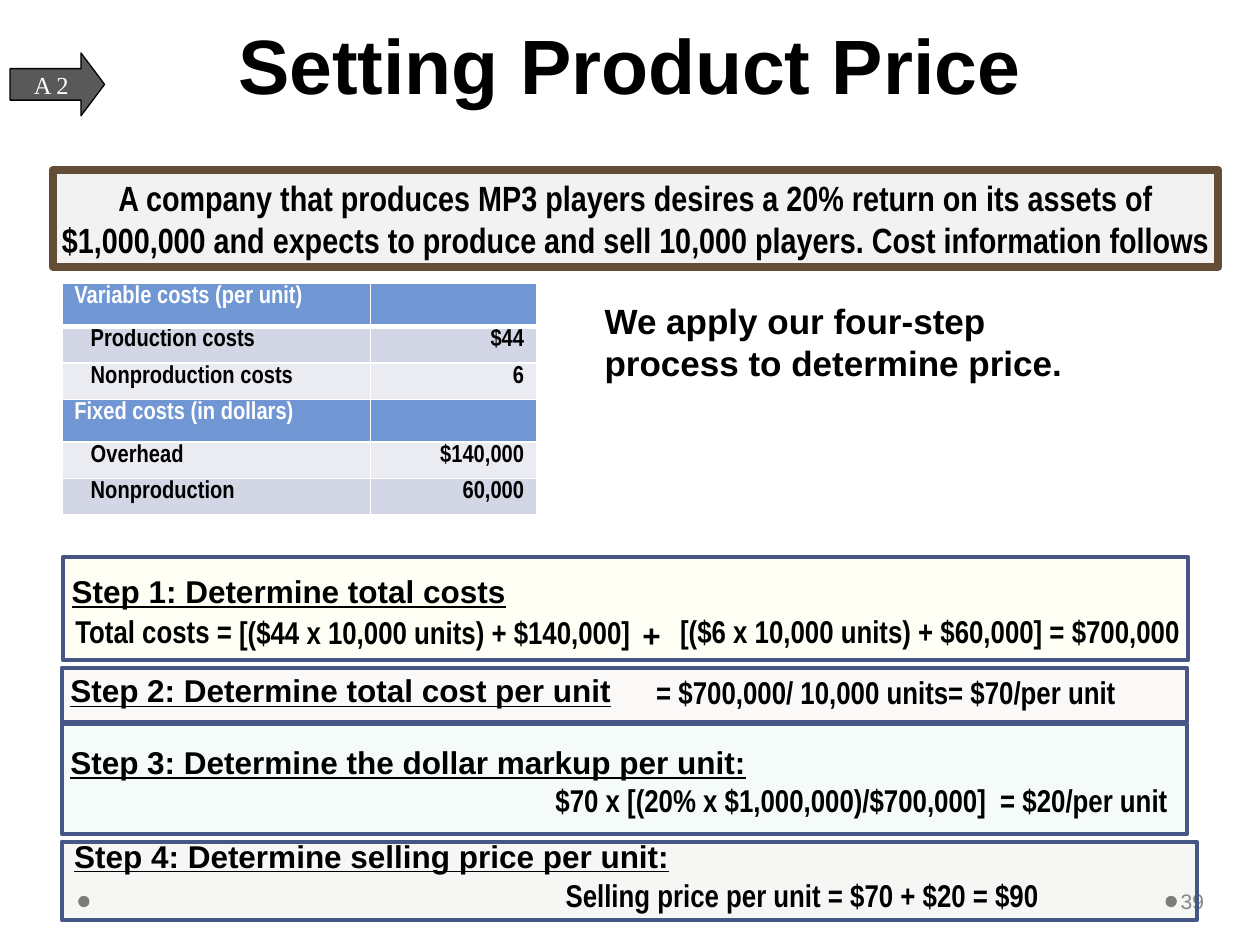
from lxml.etree import SubElement
from pptx import Presentation
from pptx.dml.color import RGBColor
from pptx.enum.shapes import MSO_SHAPE
from pptx.enum.text import MSO_ANCHOR, PP_ALIGN
from pptx.oxml.ns import qn
from pptx.util import Inches, Pt

NARROW = "Arial Narrow"
HEADER, DARK, LIGHT = "7097D3", "D2D6E5", "EAECF2"
COSTS = [
    ("Variable costs (per unit)", "", HEADER),
    ("Production costs", "$44", DARK),
    ("Nonproduction costs", "6", LIGHT),
    ("Fixed costs (in dollars)", "", HEADER),
    ("Overhead", "$140,000", LIGHT),
    ("Nonproduction", "60,000", DARK),
]
COL_WIDTHS, ROW_HEIGHT = (2.45, 1.32), 0.29
STEPS = [
    {"box": (0.5, 4.42, 8.93, 0.82), "tint": "FFFF00",
     "heading": ("Step 1: Determine total costs", 0.47, 4.49, 3.79),
     "formulas": [("Total costs =", 0.5, 4.81, 2.44, NARROW),
                  ("[($44 x 10,000 units) + $140,000]", 1.8, 4.82, 3.4, NARROW),
                  ("+", 5, 4.84, 0.43, "Arial"),
                  ("[($6 x 10,000 units) + $60,000] = $700,000",
                   5.3, 4.81, 4.63, NARROW)]},
    {"box": (0.49, 5.3, 8.93, 0.43), "tint": "9C5252",
     "heading": ("Step 2: Determine total cost per unit", 0.46, 5.28, 4.7),
     "formulas": [("= $700,000/ 10,000 units= $70/per unit",
                   5.11, 5.29, 4.59, NARROW)]},
    {"box": (0.49, 5.75, 8.93, 0.87), "tint": "00B050",
     "heading": ("Step 3: Determine the dollar markup per unit:", 0.46, 5.85, 6.54),
     "formulas": [("$70 x [(20% x $1,000,000)/$700,000]  = $20/per unit",
                   4.31, 6.15, 5.19, NARROW)]},
    {"box": (0.49, 6.68, 9.01, 0.62), "tint": "314410",
     "heading": ("Step 4: Determine selling price per unit:", 0.49, 6.59, 6),
     "formulas": [("Selling price per unit = $70 + $20 = $90",
                   4.39, 6.9, 4.22, NARROW)]},
]


def rgb(value):
    return RGBColor.from_string(value)


def write(tf, text, size=18, font="Arial", color="000000", bold=True,
          underline=False, align=PP_ALIGN.LEFT, anchor=MSO_ANCHOR.TOP,
          insets=(0.1, 0.05, 0.1, 0.05), wrap=True, spacing=None):
    tf.word_wrap = wrap
    tf.vertical_anchor = anchor
    tf.margin_left, tf.margin_top, tf.margin_right, tf.margin_bottom = map(Inches, insets)
    p = tf.paragraphs[0]
    p.alignment = align
    if spacing:
        p.line_spacing = Pt(spacing)
    r = p.add_run()
    r.text = text
    r.font.size, r.font.name = Pt(size), font
    r.font.bold, r.font.underline = bold, underline
    r.font.color.rgb = rgb(color)


def add_text(s, text, x, y, w, h=0.4, **fmt):
    tb = s.shapes.add_textbox(Inches(x), Inches(y), Inches(w), Inches(h))
    write(tb.text_frame, text, **fmt)


def add_box(s, kind, box, fill, line=None, width=0, alpha=None):
    sp = s.shapes.add_shape(kind, *map(Inches, box))
    sp.shadow.inherit = False
    sp.fill.solid()
    sp.fill.fore_color.rgb = rgb(fill)
    if alpha:
        clr = sp._element.spPr.find(qn("a:solidFill"))[0]
        SubElement(clr, qn("a:alpha"), val=str(alpha * 1000))
    if line:
        sp.line.color.rgb = rgb(line)
        sp.line.width = Pt(width)
    else:
        sp.line.fill.background()
    return sp


def set_borders(cell, bottom):
    tcPr = cell._tc.get_or_add_tcPr()
    for i, (side, width) in enumerate(zip("LRTB", (1, 1, 1, bottom))):
        ln = tcPr.makeelement(qn(f"a:ln{side}"), {"w": str(Pt(width))})
        SubElement(SubElement(ln, qn("a:solidFill")), qn("a:srgbClr"), val="FFFFFF")
        tcPr.insert(i, ln)


def add_costs(s, x, y):
    frame = s.shapes.add_table(len(COSTS), 2, Inches(x), Inches(y),
                               Inches(sum(COL_WIDTHS)), Inches(ROW_HEIGHT * len(COSTS)))
    table = frame.table
    for col, width in zip(table.columns, COL_WIDTHS):
        col.width = Inches(width)
    for i, (label, amount, fill) in enumerate(COSTS):
        table.rows[i].height = Inches(ROW_HEIGHT)
        header = fill == HEADER
        for j, text in enumerate((label, amount)):
            cell = table.cell(i, j)
            write(cell.text_frame, text, size=14, font=NARROW,
                  color="FFFFFF" if header else "000000",
                  align=PP_ALIGN.RIGHT if j else PP_ALIGN.LEFT)
            cell.margin_left = Inches(0.1 if header or j else 0.23)
            cell.margin_right = Inches(0.1)
            cell.margin_top = cell.margin_bottom = Inches(0.02)
            cell.fill.solid()
            cell.fill.fore_color.rgb = rgb(fill)
            set_borders(cell, 1 if i else 3)


def add_step(s, step):
    add_box(s, MSO_SHAPE.RECTANGLE, step["box"], step["tint"], "475785", 2.25, alpha=4)
    add_text(s, *step["heading"], underline=True)
    for text, x, y, w, font in step["formulas"]:
        add_text(s, text, x, y, w, font=font)


def main():
    """Build the product pricing slide."""
    prs = Presentation()
    prs.slide_width, prs.slide_height = Inches(10), Inches(7.5)
    s = prs.slides.add_slide(prs.slide_layouts[6])
    for x in (9.25, 0.62):
        add_box(s, MSO_SHAPE.OVAL, (x, 7.11, 0.09, 0.09), "808080")
    banner = add_box(s, MSO_SHAPE.RECTANGLE, (0.42, 1.35, 9.25, 0.77),
                     "F2F2F2", "634D36", 4.5)
    write(banner.text_frame,
          "A company that produces MP3 players desires a 20% return on its assets of "
          "$1,000,000 and expects to produce and sell 10,000 players. "
          "Cost information follows",
          size=20, font=NARROW, align=PP_ALIGN.CENTER, insets=(0, 0.05, 0, 0.05))
    add_text(s, "Setting Product Price", 0.5, 0.35, 9, 0.57, size=44, spacing=58,
             align=PP_ALIGN.CENTER, anchor=MSO_ANCHOR.BOTTOM)
    add_text(s, "39", 9.34, 6.95, 0.61, size=12, color="898989", bold=False,
             anchor=MSO_ANCHOR.MIDDLE, insets=(0.03, 0.05, 0.05, 0.05))
    arrow = add_box(s, MSO_SHAPE.RIGHT_ARROW, (0.08, 0.42, 0.75, 0.5),
                    "595959", "000000", 0.75)
    arrow.adjustments[1] = 0.375
    write(arrow.text_frame, "A 2", size=14, font="Times New Roman", color="FFFFFF",
          bold=False, align=PP_ALIGN.CENTER, anchor=MSO_ANCHOR.MIDDLE, wrap=False)
    add_costs(s, 0.49, 2.25)
    for step in STEPS:
        add_step(s, step)
    add_text(s, "We apply our four-step process to determine price.",
             4.7, 2.33, 4.13, 0.77, size=20)
    prs.save("out.pptx")


if __name__ == "__main__":
    main()
